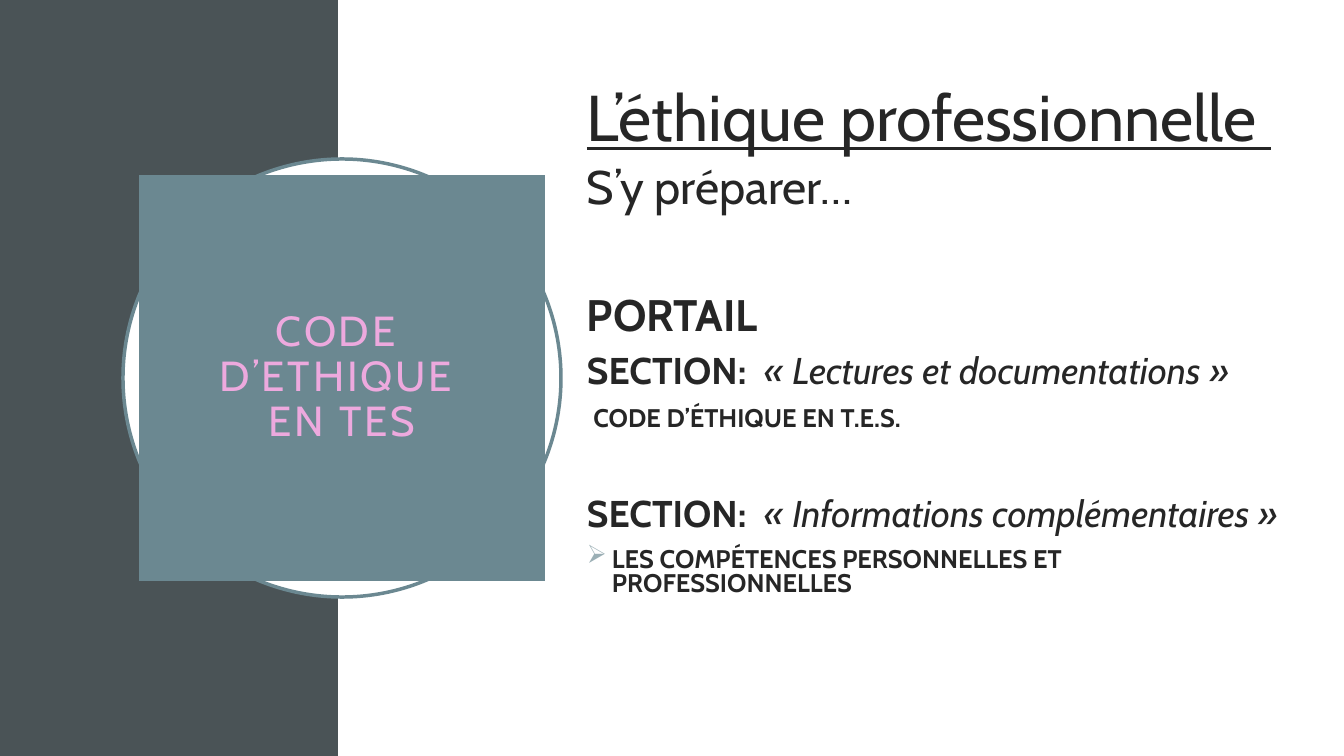
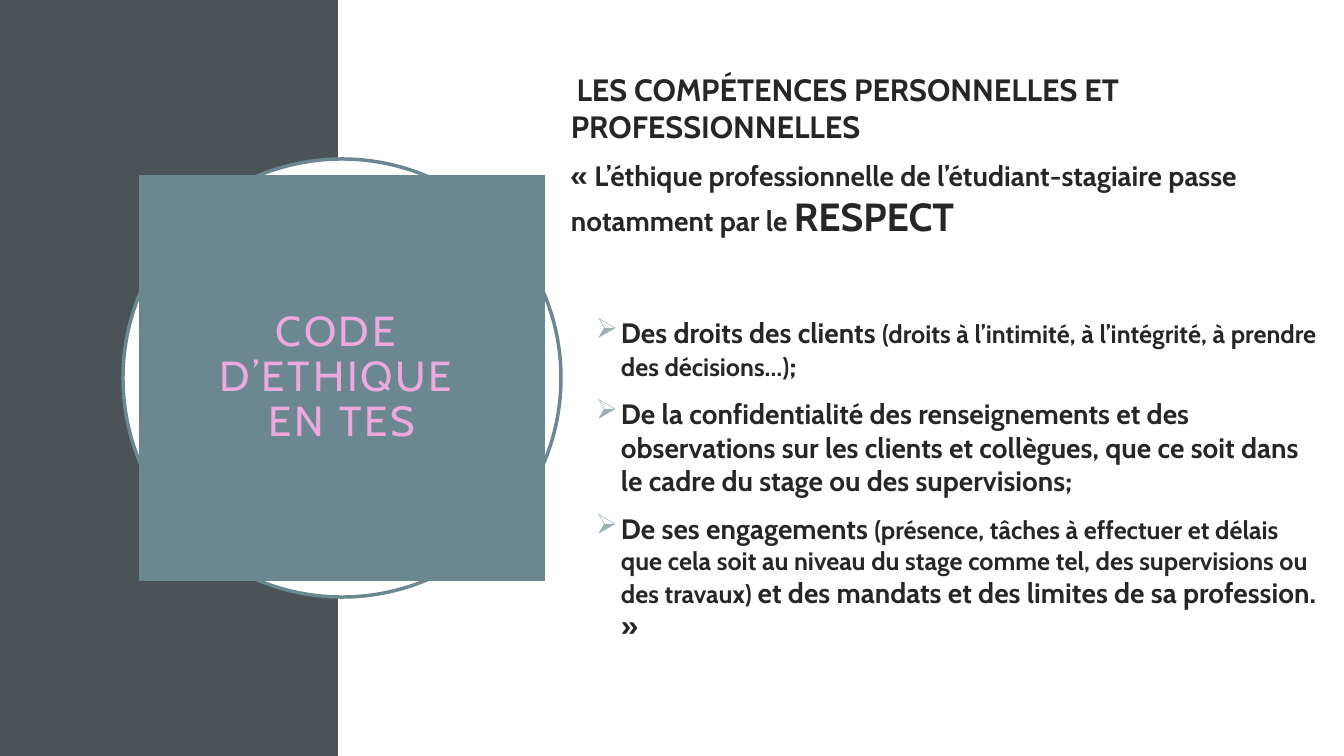
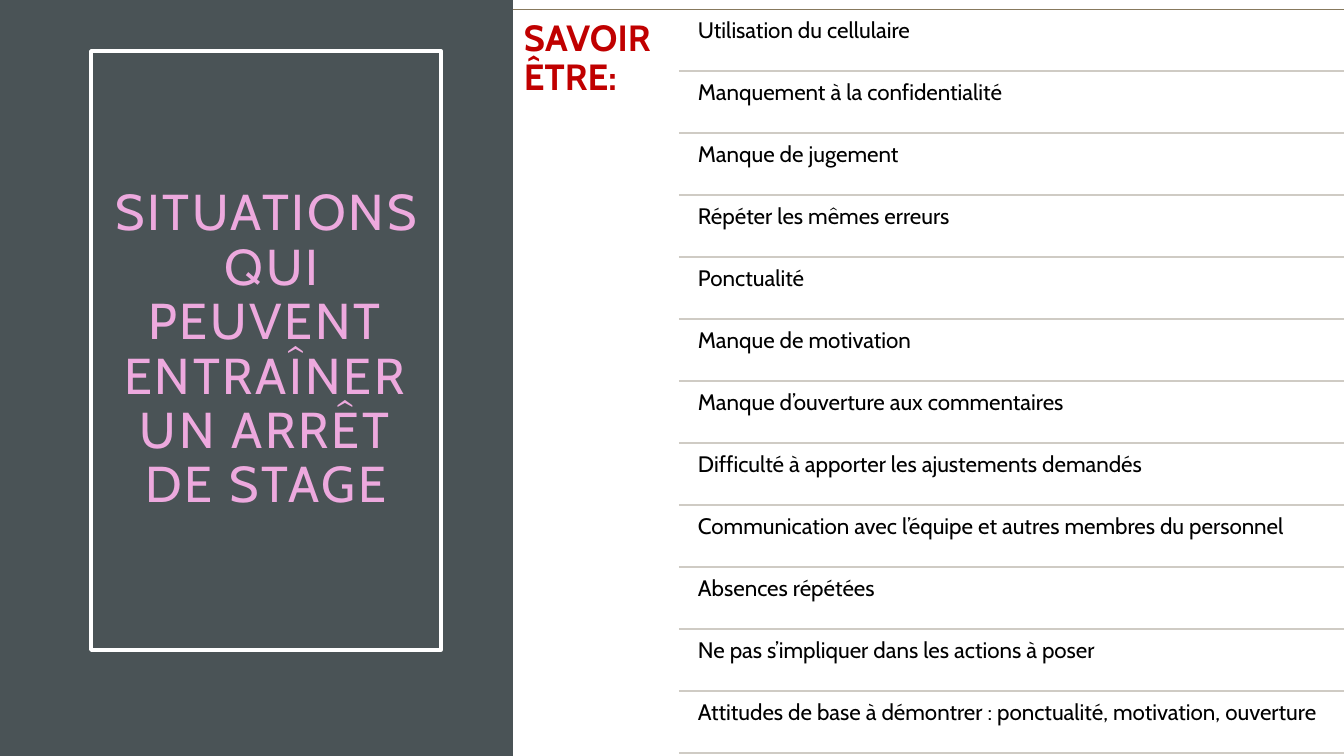
import pptx
import pptx.dml.color
import pptx.enum.shapes
import pptx.enum.text
import pptx.oxml
import pptx.oxml.ns
import pptx.util
import lxml.etree

# Shared style
PX = 914400 / 100.8
SLIDE_WIDTH, SLIDE_HEIGHT = 1344, 756
FONT = "Cabin"
SLATE = pptx.dml.color.RGBColor(0x4A, 0x53, 0x56)
TEAL = pptx.dml.color.RGBColor(0x6B, 0x88, 0x91)
BULLET = pptx.dml.color.RGBColor(0x9B, 0xAF, 0xB5)
PINK = pptx.dml.color.RGBColor(0xED, 0xA9, 0xDE)
INK = pptx.dml.color.RGBColor(0x26, 0x26, 0x26)
BLACK = pptx.dml.color.RGBColor(0, 0, 0)
WHITE = pptx.dml.color.RGBColor(0xFF, 0xFF, 0xFF)
RED = pptx.dml.color.RGBColor(0xC0, 0, 0)
BROWN = pptx.dml.color.RGBColor(0x87, 0x79, 0x5D)
RULE = pptx.dml.color.RGBColor(0xCF, 0xCB, 0xC4)

SHAPE = pptx.enum.shapes.MSO_SHAPE
CENTER = pptx.enum.text.PP_ALIGN.CENTER
MIDDLE = pptx.enum.text.MSO_ANCHOR.MIDDLE
TOP = pptx.enum.text.MSO_ANCHOR.TOP

CODE_TITLE = ["CODE ", "D’ETHIQUE ", "EN TES"]
STOP_TITLE = ["SITUATIONS", " QUI PEUVENT ENTRAÎNER UN ARRÊT DE STAGE"]

# Each paragraph: (format, [(text, size, font format), ...])
BOLD = {"bold": True}
ITALIC = {"italic": True}
TIGHT = {"line_spacing": 0.8, "space_before": 10}
SECTION = {**TIGHT, "tab": 177}
PREPARATION = [
    (TIGHT, [("L’éthique professionnelle ", 46.2, {"underline": True})]),
    (TIGHT, [("S’y préparer…", 33.6, {})]),
    ({**TIGHT, "space_before": 53}, [("PORTAIL", 31.5, BOLD), (" ", 40.6, BOLD)]),
    (SECTION, [("SECTION:\t", 26.6, BOLD), ("« Lectures et documentations »", 26.6, ITALIC)]),
    (TIGHT, [(" ", 20.3, BOLD), ("CODE D’ÉTHIQUE EN T.E.S.", 18.2, BOLD)]),
    ({**SECTION, "space_before": 47},
     [("SECTION:\t", 26.6, BOLD), ("« Informations complémentaires »", 26.6, ITALIC)]),
    ({**TIGHT, "bullet": 25},
     [("LES COMPÉTENCES PERSONNELLES ET PROFESSIONNELLES", 18.2, BOLD)]),
]
LOOSE = {"space_before": 10}
POINT = {**LOOSE, "bullet": 50}
RESPECT = [
    (LOOSE, [(" ", 18, BOLD), ("LES COMPÉTENCES PERSONNELLES ET PROFESSIONNELLES", 22, BOLD)]),
    (LOOSE, [("« L’éthique professionnelle de l’étudiant-stagiaire passe notamment par le ", 20, BOLD),
             ("RESPECT", 28, BOLD)]),
    ({**POINT, "space_before": 54},
     [("Des droits des clients ", 20, BOLD),
      ("(droits à l’intimité, à l’intégrité, à prendre des décisions…)", 18, BOLD),
      (";", 20, BOLD)]),
    (POINT, [("De la confidentialité des renseignements et des observations sur les clients et "
              "collègues, que ce soit dans le cadre du stage ou des supervisions;", 20, BOLD)]),
    (POINT, [("De ses engagements ", 20, BOLD),
             ("(présence, tâches à effectuer et délais que cela soit au niveau du stage comme tel, "
              "des supervisions ou des travaux) ", 18, BOLD),
             ("et des mandats et des limites de sa profession. »", 20, BOLD)]),
]
SITUATIONS = [
    "Utilisation du cellulaire",
    "Manquement à la confidentialité",
    "Manque de jugement",
    "Répéter les mêmes erreurs",
    "Ponctualité",
    "Manque de motivation",
    "Manque d’ouverture aux commentaires",
    "Difficulté à apporter les ajustements demandés",
    "Communication avec l’équipe et autres membres du personnel",
    "Absences répétées",
    "Ne pas s’impliquer dans les actions à poser",
    "Attitudes de base à démontrer : ponctualité, motivation, ouverture",
]


def px(length):
    return pptx.util.Emu(round(length * PX))


def apply(target, values):
    for name, value in values.items():
        setattr(target, name, value)


def add_child(parent, tag, **attributes):
    child = lxml.etree.SubElement(parent, pptx.oxml.ns.qn(tag))
    for name, value in attributes.items():
        child.set(name, str(value))
    return child


def format_paragraph(paragraph, values):
    """Set spacing, then the bullet (hanging indent 25 px) and the tab stop."""
    values = dict(values)
    bullet, tab = values.pop("bullet", None), values.pop("tab", None)
    if "space_before" in values:
        values["space_before"] = pptx.util.Pt(values["space_before"])
    apply(paragraph, values)
    properties = paragraph._p.get_or_add_pPr()
    if bullet:
        properties.set("marL", str(px(bullet)))
        properties.set("indent", str(px(-25)))
        color = add_child(properties, "a:buClr")
        add_child(color, "a:srgbClr", val=BULLET)
        add_child(properties, "a:buChar", char="➢")
    if tab:
        stops = add_child(properties, "a:tabLst")
        add_child(stops, "a:tab", pos=px(tab), algn="l")


def write_text(shape, paragraphs, color, insets, anchor=TOP):
    horizontal, vertical = px(insets[0]), px(insets[1])
    frame = shape.text_frame
    apply(frame, {"word_wrap": True, "auto_size": pptx.enum.text.MSO_AUTO_SIZE.NONE,
                  "vertical_anchor": anchor, "margin_left": horizontal,
                  "margin_right": horizontal, "margin_top": vertical,
                  "margin_bottom": vertical})
    for index, (paragraph_format, runs) in enumerate(paragraphs):
        paragraph = frame.add_paragraph() if index else frame.paragraphs[0]
        format_paragraph(paragraph, paragraph_format)
        for text, size, font_format in runs:
            run = paragraph.add_run()
            run.text = text
            apply(run.font, {"name": FONT, "size": pptx.util.Pt(size), **font_format})
            run.font.color.rgb = color


def paint(shape, fill=None, line=None):
    if fill is None:
        shape.fill.background()
    else:
        shape.fill.solid()
        shape.fill.fore_color.rgb = fill
    if line is None:
        shape.line.fill.background()
    else:
        shape.line.color.rgb = line
        shape.line.width = pptx.util.Pt(2.5)


def add_shape(slide, kind, box, fill, line=None):
    shape = slide.shapes.add_shape(kind, *map(px, box))
    shape.shadow.inherit = False
    paint(shape, fill, line)


def add_text(slide, box, paragraphs, color, insets):
    write_text(slide.shapes.add_textbox(*map(px, box)), paragraphs, color, insets)


def add_rule(slide, left, right, top, color, width):
    rule = slide.shapes.add_connector(pptx.enum.shapes.MSO_CONNECTOR.STRAIGHT,
                                      px(left), px(top), px(right), px(top))
    rule.line.color.rgb = color
    rule.line.width = pptx.util.Pt(width)
    add_child(rule.element.spPr, "a:effectLst")


def place_title(slide, box, lines, size, fill=None, line=None):
    """Format the title placeholder and bring it in front of the panel."""
    title = slide.shapes.title
    apply(title, dict(zip(("left", "top", "width", "height"), map(px, box))))
    paint(title, fill, line)
    centered = {"alignment": CENTER, "line_spacing": 0.9, "space_before": 0}
    write_text(title, [(centered, [(text, size, {})]) for text in lines],
               PINK, (20, 20), MIDDLE)
    for paragraph in title.text_frame.paragraphs:
        for run in paragraph.runs:
            run._r.get_or_add_rPr().set("spc", "200")
    title.element.getparent().append(title.element)


def new_slide(presentation, panel_width):
    slide = presentation.slides.add_slide(presentation.slide_layouts[5])
    add_shape(slide, SHAPE.RECTANGLE, (0, 0, panel_width, SLIDE_HEIGHT), SLATE)
    return slide


def code_slide(presentation, body_box, paragraphs):
    """Side panel, ringed square title and body text."""
    slide = new_slide(presentation, 338)
    left, top, side, gap = 139, 175, 406, 16
    ring = (left - gap, top - gap, side + 2 * gap, side + 2 * gap)
    add_shape(slide, SHAPE.OVAL, ring, WHITE, TEAL)
    place_title(slide, (left, top, side, side), CODE_TITLE, 30, fill=TEAL)
    add_text(slide, body_box, paragraphs, INK, (10, 5))


def situation_list(slide, left, top, right):
    """Red heading beside ruled rows."""
    heading_width, pitch = 166, 62
    spacing = {"line_spacing": 0.9}
    add_rule(slide, left, right, top, BROWN, 0.5)
    add_text(slide, (left, top, heading_width, SLIDE_HEIGHT - top),
             [(spacing, [("SAVOIR ÊTRE:", 26, BOLD)])], RED, (11, 11))
    row_left = left + heading_width
    text_left = row_left + 12
    for index, situation in enumerate(SITUATIONS):
        row_top = top + index * pitch
        add_text(slide, (text_left, row_top + 3, right - text_left, 59),
                 [(spacing, [(situation, 16, {})])], BLACK, (7, 7))
        add_rule(slide, row_left, right, row_top + pitch, RULE, 1)


def situations_slide(presentation):
    panel_width = 513
    slide = new_slide(presentation, panel_width)
    place_title(slide, (91, 51, 350, 599), STOP_TITLE, 36, line=WHITE)
    situation_list(slide, panel_width, 9, SLIDE_WIDTH)


def main():
    presentation = pptx.Presentation()
    presentation.slide_width = px(SLIDE_WIDTH)
    presentation.slide_height = px(SLIDE_HEIGHT)
    code_slide(presentation, (577, 87, 720, 590), PREPARATION)
    code_slide(presentation, (561, 66, 766, 647), RESPECT)
    situations_slide(presentation)
    presentation.save("out.pptx")


if __name__ == "__main__":
    main()
